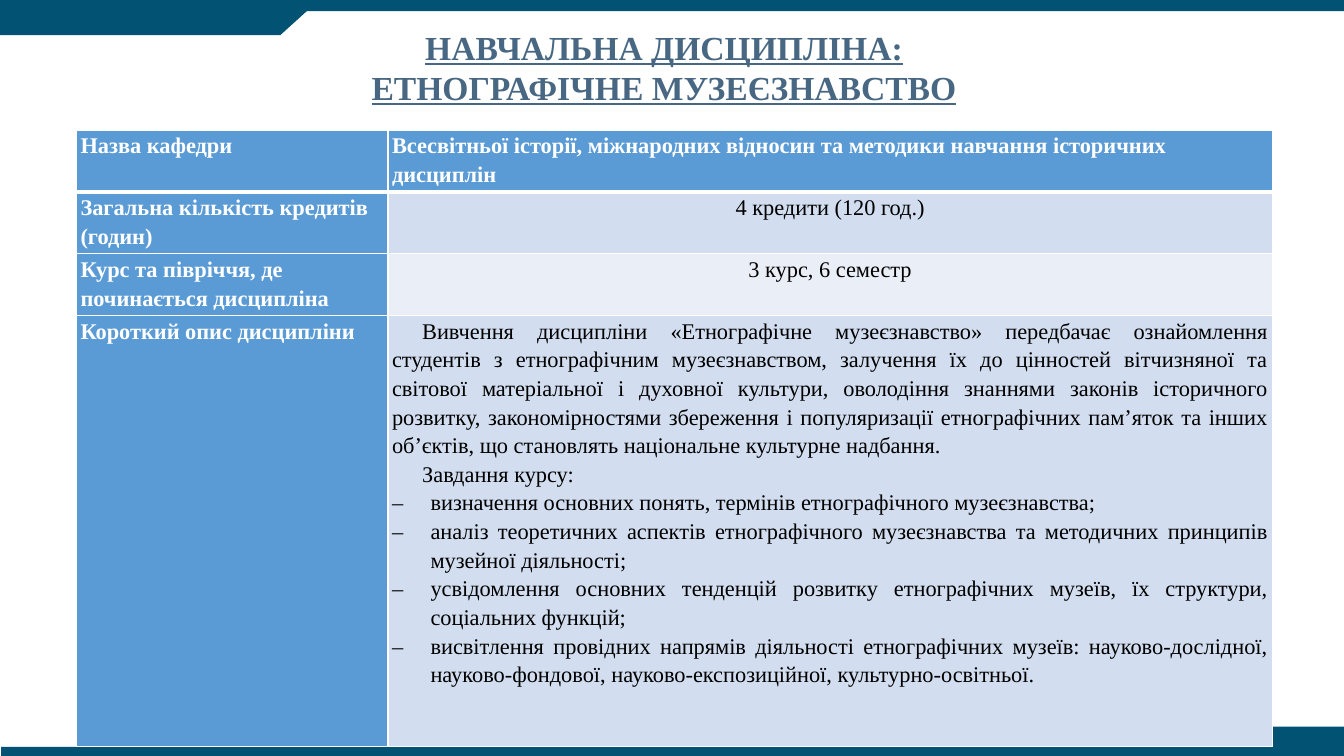
from dataclasses import dataclass

from lxml.etree import SubElement
from pptx import Presentation
from pptx.dml.color import RGBColor
from pptx.enum.shapes import MSO_SHAPE
from pptx.enum.text import MSO_ANCHOR, PP_ALIGN
from pptx.oxml.ns import qn
from pptx.util import Cm, Pt


@dataclass(frozen=True)
class Theme:
    font: str = "Times New Roman"
    frame: str = "025373"
    title: str = "486782"
    label: str = "5B9BD5"
    band_dark: str = "D2DEEF"
    band_light: str = "EAEFF7"
    white: str = "FFFFFF"
    black: str = "000000"
    title_size: int = 24
    table_size: int = 16
    rule: int = 1
    header_rule: int = 3


THEME = Theme()
CENTER = {"alignment": PP_ALIGN.CENTER}
JUSTIFY = {"alignment": PP_ALIGN.JUSTIFY}

TITLE = ["НАВЧАЛЬНА ДИСЦИПЛІНА:", "ЕТНОГРАФІЧНЕ МУЗЕЄЗНАВСТВО"]
DESCRIPTION = [
    "Вивчення дисципліни «Етнографічне музеєзнавство» передбачає ознайомлення "
    "студентів з етнографічним музеєзнавством, залучення їх до цінностей вітчизняної "
    "та світової матеріальної і духовної культури, оволодіння знаннями законів "
    "історичного розвитку, закономірностями збереження і популяризації етнографічних "
    "пам’яток та інших об’єктів, що становлять національне культурне надбання.",
    "Завдання курсу:",
]
TASKS = [
    "визначення основних понять, термінів етнографічного музеєзнавства;",
    "аналіз теоретичних аспектів етнографічного музеєзнавства та методичних "
    "принципів музейної діяльності;",
    "усвідомлення основних тенденцій розвитку етнографічних музеїв, їх структури, "
    "соціальних функцій;",
    "висвітлення провідних напрямів діяльності етнографічних музеїв: "
    "науково-дослідної, науково-фондової, науково-експозиційної, культурно-освітньої.",
]


def set_all(target, values):
    for name, value in values.items():
        setattr(target, name, value)


class CourseSlide:
    def __init__(self, deck, theme):
        self.theme = theme
        self.page = deck.slides.add_slide(deck.slide_layouts[6])

    def shape(self, kind, left, top, width, height, rotation=0):
        shape = self.page.shapes.add_shape(kind, Cm(left), Cm(top), Cm(width), Cm(height))
        shape.shadow.inherit = False
        shape.rotation = rotation
        shape.fill.solid()
        shape.fill.fore_color.rgb = RGBColor.from_string(self.theme.frame)
        shape.line.fill.background()

    def add_span(self, para, text, size, color, bold=False, underline=False):
        span = para.add_run()
        span.text = text
        set_all(span.font, {"name": self.theme.font, "size": Pt(size),
                            "bold": bold, "underline": underline})
        span.font.color.rgb = RGBColor.from_string(color)

    def title(self, lines, left, top, width, height):
        box = self.page.shapes.add_textbox(Cm(left), Cm(top), Cm(width), Cm(height))
        set_all(box.text_frame, {"word_wrap": True, "vertical_anchor": MSO_ANCHOR.MIDDLE})
        for index, line in enumerate(lines):
            para = self.paragraph(box.text_frame, index, CENTER)
            self.add_span(para, line, self.theme.title_size, self.theme.title, True, True)

    def paragraph(self, frame, index, values):
        para = frame.add_paragraph() if index else frame.paragraphs[0]
        set_all(para, values)
        return para

    def indent(self, para, margin, first_line, bullet=None):
        """Set the left margin and first-line indent in cm, with an optional bullet."""
        properties = para._p.get_or_add_pPr()
        properties.set("marL", str(Cm(margin)))
        properties.set("indent", str(Cm(first_line)))
        if bullet:
            SubElement(properties, qn("a:buFont"), typeface=self.theme.font)
            SubElement(properties, qn("a:buChar"), char=bullet)

    def table(self, left, top, columns, rows):
        frame = self.page.shapes.add_table(len(rows), len(columns), Cm(left), Cm(top),
                                           Cm(sum(columns)), Cm(sum(rows)))
        table = frame.table
        set_all(table, {"first_row": False, "horz_banding": False})
        for column, width in zip(table.columns, columns):
            column.width = Cm(width)
        for row, height in zip(table.rows, rows):
            row.height = Cm(height)
        return table

    def cell(self, cell, fill, top_rule, bottom_rule):
        set_all(cell, {"margin_left": Cm(0.1), "margin_right": Cm(0.1),
                       "margin_top": 0, "margin_bottom": 0})
        rules = {"L": self.theme.rule, "R": self.theme.rule,
                 "T": top_rule, "B": bottom_rule}
        for side, width in rules.items():
            line = SubElement(cell._tc.get_or_add_tcPr(), qn(f"a:ln{side}"), w=str(Pt(width)))
            solid = SubElement(line, qn("a:solidFill"))
            SubElement(solid, qn("a:srgbClr"), val=self.theme.white)
        cell.fill.solid()
        cell.fill.fore_color.rgb = RGBColor.from_string(fill)

    def cell_text(self, cell, index, text, color, bold=False, values=None):
        para = self.paragraph(cell.text_frame, index, {"line_spacing": 1.15, **(values or {})})
        self.add_span(para, text, self.theme.table_size, color, bold)
        return para


def main():
    deck = Presentation()
    set_all(deck, {"slide_width": Cm(33.87), "slide_height": Cm(19.05)})
    slide = CourseSlide(deck, THEME)

    slide.shape(MSO_SHAPE.RECTANGLE, 0, 0, 33.87, 0.28)
    slide.shape(MSO_SHAPE.RECTANGLE, 0.03, 18.82, 33.84, 0.23)
    slide.shape(MSO_SHAPE.RECTANGLE, 0, 0.13, 7.06, 0.76)
    slide.shape(MSO_SHAPE.FLOWCHART_MERGE, 6.22, 0.13, 1.68, 0.76)
    slide.shape(MSO_SHAPE.RECTANGLE, 26.9, 18.31, 6.97, 0.74)
    slide.shape(MSO_SHAPE.FLOWCHART_MERGE, 26.06, 18.31, 1.68, 0.74, 180)
    slide.title(TITLE, 1.42, 0.53, 30.63, 2.31)

    rows = [
        ("Назва кафедри",
         "Всесвітньої історії, міжнародних відносин та методики навчання історичних дисциплін",
         THEME.label),
        ("Загальна кількість кредитів (годин)", "4 кредити (120 год.)", THEME.band_dark),
        ("Курс та півріччя, де починається дисципліна", "3 курс, 6 семестр",
         THEME.band_light),
        ("Короткий опис дисципліни", None, THEME.band_dark),
    ]
    table = slide.table(1.93, 3.28, [7.85, 22.28], [1.55, 1.55, 1.55, 10.87])
    for index, (label, value, fill) in enumerate(rows):
        name_cell, value_cell = table.cell(index, 0), table.cell(index, 1)
        top_rule = THEME.header_rule if index == 1 else THEME.rule
        bottom_rule = THEME.header_rule if index == 0 else THEME.rule
        slide.cell(name_cell, THEME.label, top_rule, bottom_rule)
        slide.cell(value_cell, fill, top_rule, bottom_rule)
        slide.cell_text(name_cell, 0, label, THEME.white, True)
        if index == 0:
            slide.cell_text(value_cell, 0, value, THEME.white, True)
        elif value:
            slide.cell_text(value_cell, 0, value, THEME.black, values=CENTER)

    description_cell = table.cell(3, 1)
    for index, text in enumerate(DESCRIPTION + TASKS):
        para = slide.cell_text(description_cell, index, text, THEME.black, values=JUSTIFY)
        if index < len(DESCRIPTION):
            slide.indent(para, 0, 0.76)
        else:
            slide.indent(para, 0.97, -0.97, "–")

    deck.save("out.pptx")


if __name__ == "__main__":
    main()
